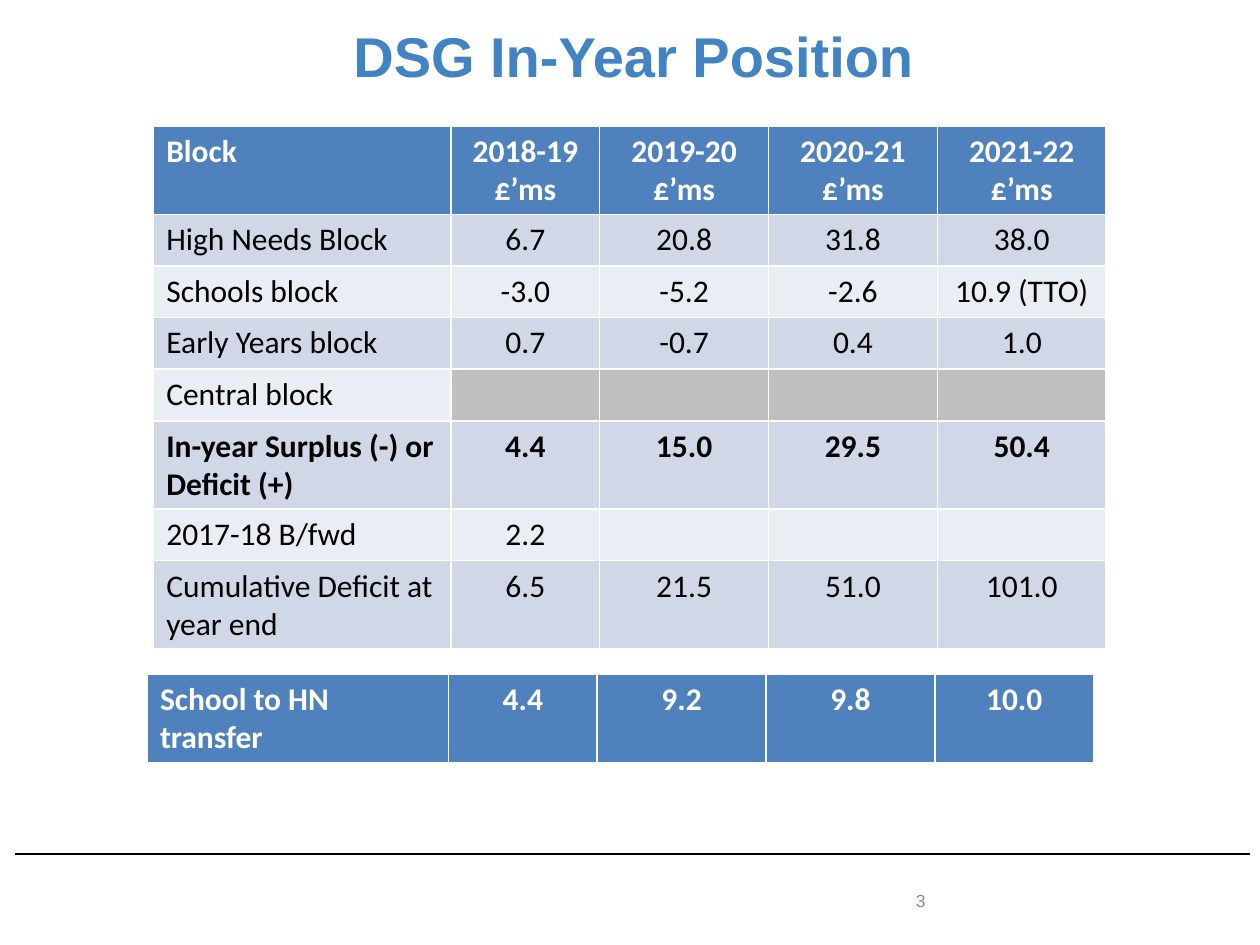
from dataclasses import dataclass

from lxml.etree import SubElement
from pptx import Presentation
from pptx.dml.color import RGBColor
from pptx.enum.shapes import MSO_CONNECTOR
from pptx.enum.text import MSO_ANCHOR, PP_ALIGN
from pptx.oxml.ns import qn
from pptx.util import Inches, Pt


@dataclass(frozen=True)
class Theme:
    title: str = "4283C4"
    header: str = "4F81BD"
    bands: tuple = ("D0D8E8", "E9EDF4")
    blocked: str = "BFBFBF"
    white: str = "FFFFFF"
    black: str = "000000"
    page: str = "8C8C8C"
    heading_font: str = "Arial"
    table_font: str = "Calibri"
    title_size: int = 32
    table_size: int = 18
    page_size: int = 10


THEME = Theme()
TITLE = "DSG In-Year Position"
PAGE = "3"
YEARS = ["2018-19", "2019-20", "2020-21", "2021-22"]
HEADER = ["Block"] + [f"{year}\n£’ms" for year in YEARS]
CENTRAL = "Central block"
SURPLUS = "In-year Surplus (-) or Deficit (+)"
CUMULATIVE = "Cumulative Deficit at year end"
POSITION = [
    HEADER,
    ["High Needs Block", "6.7", "20.8", "31.8", "38.0"],
    ["Schools block", "-3.0", "-5.2", "-2.6", "10.9 (TTO)"],
    ["Early Years block", "0.7", "-0.7", "0.4", "1.0"],
    [CENTRAL, "", "", "", ""],
    [SURPLUS, "4.4", "15.0", "29.5", "50.4"],
    ["2017-18 B/fwd", "2.2", "", "", ""],
    [CUMULATIVE, "6.5", "21.5", "51.0", "101.0"],
]
TRANSFER = [["School to HN transfer", "4.4", "9.2", "9.8", "10.0"]]
TALL_LABELS = {"Block", SURPLUS, CUMULATIVE, "School to HN transfer"}
POSITION_COLUMNS = [2.36, 1.18, 1.34, 1.34, 1.34]
TRANSFER_COLUMNS = [2.39, 1.18, 1.34, 1.34, 1.26]
TALL_ROW, ROW = 0.7, 0.41


def style(paragraph, font, size, color, bold=False, align=PP_ALIGN.LEFT):
    paragraph.alignment = align
    paragraph.font.name = font
    paragraph.font.size = Pt(size)
    paragraph.font.bold = bold
    paragraph.font.color.rgb = RGBColor.from_string(color)


def add_label(slide, text, box, *look):
    frame = slide.shapes.add_textbox(*map(Inches, box)).text_frame
    frame.word_wrap = True
    frame.vertical_anchor = MSO_ANCHOR.MIDDLE
    frame.text = text
    style(frame.paragraphs[0], *look)


def add_figures(slide, rows, columns, left, top):
    heights = [TALL_ROW if row[0] in TALL_LABELS else ROW for row in rows]
    box = map(Inches, (left, top, sum(columns), sum(heights)))
    table = slide.shapes.add_table(len(rows), len(columns), *box).table
    for column, width in zip(table.columns, columns):
        column.width = Inches(width)
    for r, (row, height) in enumerate(zip(rows, heights)):
        table.rows[r].height = Inches(height)
        band = THEME.bands[(r - 1) % 2] if r else THEME.header
        ink = THEME.black if r else THEME.white
        bold = r == 0 or row[0] == SURPLUS
        for c, text in enumerate(row):
            cell = table.cell(r, c)
            cell.text = text
            cell.fill.solid()
            fill = THEME.blocked if c and row[0] == CENTRAL else band
            cell.fill.fore_color.rgb = RGBColor.from_string(fill)
            align = PP_ALIGN.CENTER if c else PP_ALIGN.LEFT
            for paragraph in cell.text_frame.paragraphs:
                style(paragraph, THEME.table_font, THEME.table_size, ink, bold, align)


def add_rule(slide, start, end, y):
    ends = map(Inches, (start, y, end, y))
    rule = slide.shapes.add_connector(MSO_CONNECTOR.STRAIGHT, *ends)
    rule.line.color.rgb = RGBColor.from_string(THEME.black)
    rule.line.width = Pt(1)
    SubElement(rule._element.spPr, qn("a:effectLst"))


def main():
    """Build the slide on the in-year position of the DSG."""
    deck = Presentation()
    deck.slide_width, deck.slide_height = Inches(10), Inches(7.5)
    slide = deck.slides.add_slide(deck.slide_layouts[6])
    add_rule(slide, 0.12, 9.92, 6.78)
    add_label(slide, TITLE, (0.53, -0.19, 9, 1.25), THEME.heading_font,
              THEME.title_size, THEME.title, True, PP_ALIGN.CENTER)
    add_label(slide, PAGE, (7.17, 6.95, 2.33, 0.4), THEME.heading_font,
              THEME.page_size, THEME.page)
    add_figures(slide, POSITION, POSITION_COLUMNS, 1.22, 1)
    add_figures(slide, TRANSFER, TRANSFER_COLUMNS, 1.17, 5.35)
    deck.save("out.pptx")


if __name__ == "__main__":
    main()
